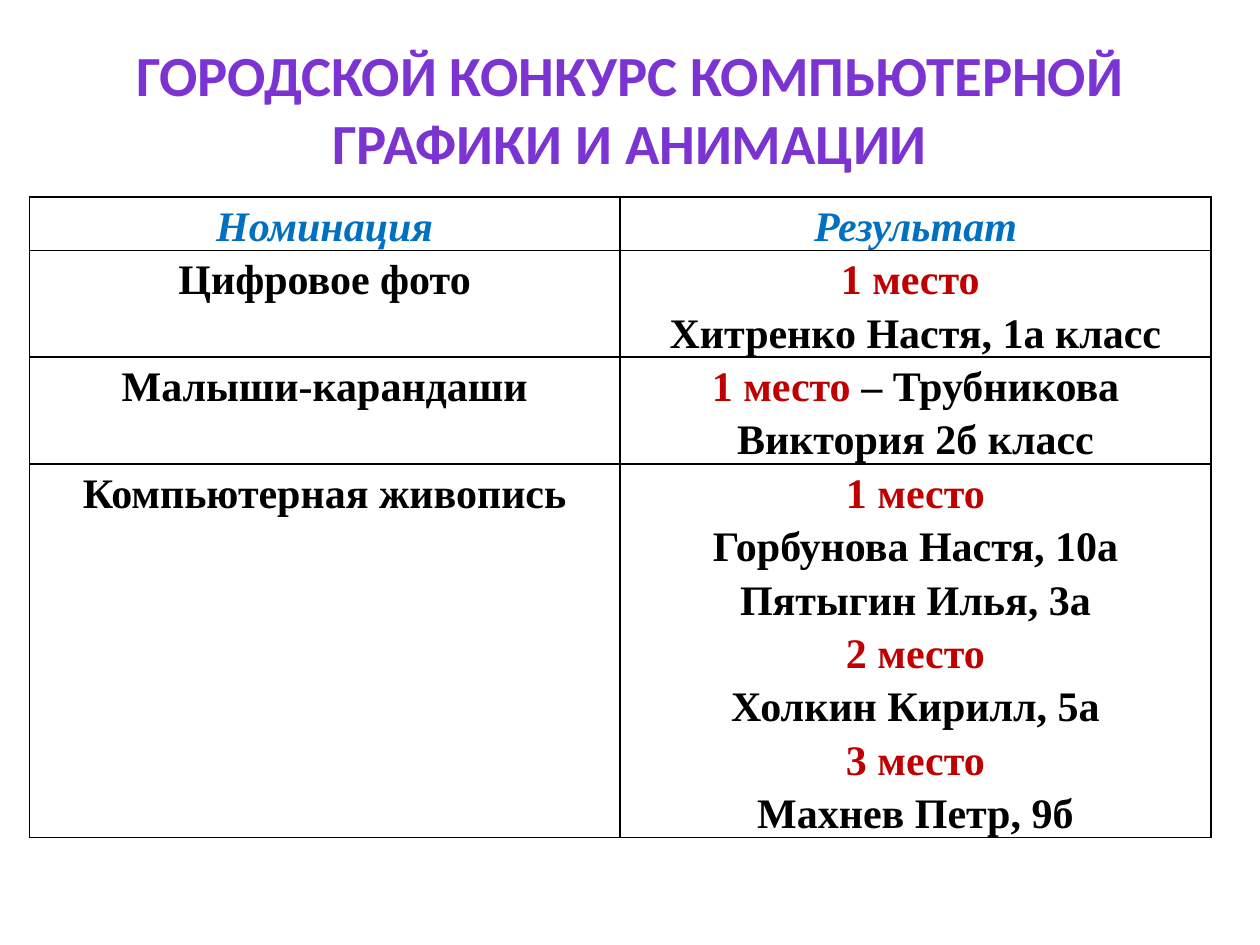
import dataclasses

import lxml.etree
import pptx
import pptx.dml.color
import pptx.enum.text
import pptx.oxml.ns
import pptx.table
import pptx.text.text
import pptx.util
from pptx.util import Cm

BLACK = "000000"
RED = "C00000"
BLUE = "0070C0"
VIOLET = "7B34D2"


@dataclasses.dataclass(frozen=True)
class Piece:
    text: str
    color: str = BLACK
    italic: bool = False


@dataclasses.dataclass(frozen=True)
class ResultRow:
    nomination: list[list[Piece]]
    result: list[list[Piece]]


ROWS = [
    ResultRow(
        [[Piece("Номинация", BLUE, True)]],
        [[Piece("Результат", BLUE, True)]],
    ),
    ResultRow(
        [[Piece("Цифровое фото")]],
        [[Piece("1 место ", RED)], [Piece("Хитренко Настя, 1а класс")]],
    ),
    ResultRow(
        [[Piece("Малыши-карандаши")]],
        [[Piece("1 место ", RED), Piece("– Трубникова Виктория 2б класс")]],
    ),
    ResultRow(
        [[Piece("Компьютерная живопись")]],
        [
            [Piece("1 место", RED)],
            [Piece("Горбунова Настя, 10а")],
            [Piece("Пятыгин Илья, 3а")],
            [Piece("2 место", RED)],
            [Piece("Холкин Кирилл, 5а")],
            [Piece("3 место", RED)],
            [Piece("Махнев Петр, 9б")],
        ],
    ),
]


def rgb(value: str) -> pptx.dml.color.RGBColor:
    return pptx.dml.color.RGBColor.from_string(value)


def add_text(
    paragraph: pptx.text.text._Paragraph,
    text: str,
    *,
    font: str = "Times New Roman",
    size: float = 24,
    color: str = BLACK,
    italic: bool = False,
) -> None:
    paragraph.alignment = pptx.enum.text.PP_ALIGN.CENTER
    run = paragraph.add_run()
    run.text = text
    run.font.name = font
    run.font.size = pptx.util.Pt(size)
    run.font.bold = True
    run.font.italic = italic
    run.font.color.rgb = rgb(color)


def add_borders(cell: pptx.table._Cell) -> None:
    qn = pptx.oxml.ns.qn
    properties = cell._tc.get_or_add_tcPr()
    for index, side in enumerate(("a:lnL", "a:lnR", "a:lnT", "a:lnB")):
        line = lxml.etree.Element(qn(side), w=str(pptx.util.Pt(1)))
        fill = lxml.etree.SubElement(line, qn("a:solidFill"))
        lxml.etree.SubElement(fill, qn("a:srgbClr"), val=BLACK)
        properties.insert(index, line)


def fill_cell(cell: pptx.table._Cell, lines: list[list[Piece]]) -> None:
    cell.margin_left = cell.margin_right = Cm(0.18)
    cell.margin_top = cell.margin_bottom = Cm(0)
    cell.fill.background()
    add_borders(cell)
    for index, pieces in enumerate(lines):
        frame = cell.text_frame
        paragraph = frame.add_paragraph() if index else frame.paragraphs[0]
        paragraph.line_spacing = 1.15
        for piece in pieces:
            add_text(paragraph, piece.text, color=piece.color, italic=piece.italic)


def add_title(slide: pptx.slide.Slide) -> None:
    title = slide.shapes.title
    title.left, title.top = Cm(1.27), Cm(0.76)
    title.width, title.height = Cm(22.86), Cm(4.19)
    frame = title.text_frame
    frame.word_wrap = True
    frame.auto_size = pptx.enum.text.MSO_AUTO_SIZE.NONE
    frame.vertical_anchor = pptx.enum.text.MSO_ANCHOR.TOP
    frame.margin_top = Cm(0.04)
    add_text(
        frame.paragraphs[0],
        "ГОРОДСКОЙ КОНКУРС КОМПЬЮТЕРНОЙ ГРАФИКИ И АНИМАЦИИ",
        font="Calibri",
        size=32.4,
        color=VIOLET,
    )


def add_results(slide: pptx.slide.Slide) -> None:
    height = Cm(13.87)
    shape = slide.shapes.add_table(
        len(ROWS), 2, Cm(0.59), Cm(3.97), Cm(23.82), height
    )
    table = shape.table
    table.first_row = False
    table.horz_banding = False
    for index, row in enumerate(ROWS):
        table.rows[index].height = Cm(1.04)
        fill_cell(table.cell(index, 0), row.nomination)
        fill_cell(table.cell(index, 1), row.result)
    shape.height = height


def main() -> None:
    presentation = pptx.Presentation()
    presentation.slide_width = Cm(25.4)
    presentation.slide_height = Cm(19.05)
    slide = presentation.slides.add_slide(presentation.slide_layouts[5])
    add_title(slide)
    add_results(slide)
    presentation.save("out.pptx")


if __name__ == "__main__":
    main()
